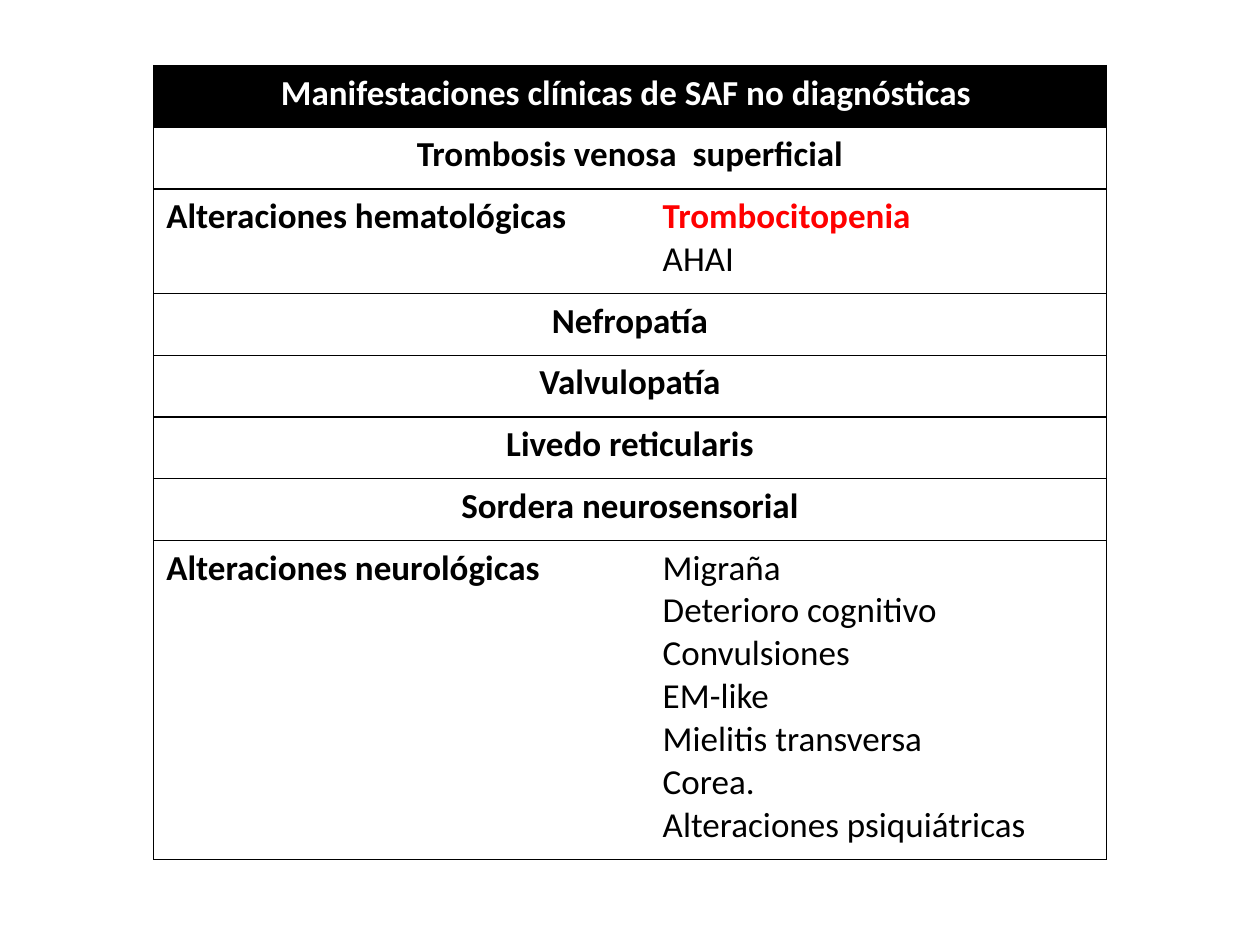
from dataclasses import dataclass

from lxml.etree import SubElement
from pptx import Presentation
from pptx.dml.color import RGBColor as RGB
from pptx.enum.text import PP_ALIGN as Align
from pptx.oxml.ns import qn
from pptx.util import Inches, Pt


@dataclass(frozen=True)
class Theme:
    font: str = "Calibri"
    size: float = 20
    rule: float = 0.75
    ink: str = "000000"
    paper: str = "FFFFFF"
    accent: str = "FF0000"


class SlideBuilder:
    """Draws elements on the current slide in one theme."""

    def __init__(self, slide, theme):
        self.slide = slide
        self.theme = theme

    def border(self, cell, side, visible):
        props = cell._tc.get_or_add_tcPr()
        width = Pt(self.theme.rule) if visible else 0
        line = SubElement(props, qn(f"a:ln{side}"), w=str(int(width)))
        if visible:
            fill = SubElement(line, qn("a:solidFill"))
            SubElement(fill, qn("a:srgbClr"), val=self.theme.ink)
        else:
            SubElement(line, qn("a:noFill"))

    def style_cell(self, cell, fill, edges):
        for side in "LRTB":
            self.border(cell, side, side in edges)
        cell.fill.solid()
        cell.fill.fore_color.rgb = RGB.from_string(fill)

    def cell_text(self, cell, lines, color, bold=False, align=Align.LEFT, highlight=None):
        cell.text = "\n".join(lines)
        for paragraph in cell.text_frame.paragraphs:
            marked = paragraph.text == highlight
            paragraph.alignment = align
            font = paragraph.font
            font.name = self.theme.font
            font.size = Pt(self.theme.size)
            font.bold = bold or marked
            font.color.rgb = RGB.from_string(self.theme.accent if marked else color)

    def table(self, left, top, widths, line_height, padding, entries, highlight):
        heights = [max(1, len(details)) * line_height + padding for _, details in entries]
        grid = self.slide.shapes.add_table(
            len(entries), len(widths), Inches(left), Inches(top),
            Inches(sum(widths)), Inches(sum(heights))).table
        for column, width in zip(grid.columns, widths):
            column.width = Inches(width)
        for index, (heading, details) in enumerate(entries):
            grid.rows[index].height = Inches(heights[index])
            label, detail = grid.cell(index, 0), grid.cell(index, 1)
            is_header = index == 0
            fill = self.theme.ink if is_header else self.theme.paper
            color = self.theme.paper if is_header else self.theme.ink
            self.style_cell(label, fill, "LTB" if details else "LRTB")
            self.style_cell(detail, fill, "RTB")
            if details:
                self.cell_text(detail, details, color, highlight=highlight)
            else:
                label.merge(detail)
            self.cell_text(label, [heading], color, bold=True,
                           align=Align.LEFT if details else Align.CENTER)


def main():
    deck = Presentation()
    deck.slide_width, deck.slide_height = Inches(10), Inches(7.5)
    builder = SlideBuilder(deck.slides.add_slide(deck.slide_layouts[6]), Theme())
    manifestations = [
        ("Manifestaciones clínicas de SAF no diagnósticas ", []),
        ("Trombosis venosa  superficial", []),
        ("Alteraciones hematológicas", ["Trombocitopenia", "AHAI"]),
        ("Nefropatía", []),
        ("Valvulopatía", []),
        ("Livedo reticularis", []),
        ("Sordera neurosensorial", []),
        ("Alteraciones neurológicas", [
            "Migraña", "Deterioro cognitivo", "Convulsiones", "EM-like",
            "Mielitis transversa", "Corea.", "Alteraciones psiquiátricas"]),
    ]
    builder.table(1.22, 0.52, [3.94, 3.62], line_height=0.34, padding=0.15,
                  entries=manifestations, highlight="Trombocitopenia")
    deck.save("out.pptx")


if __name__ == "__main__":
    main()
